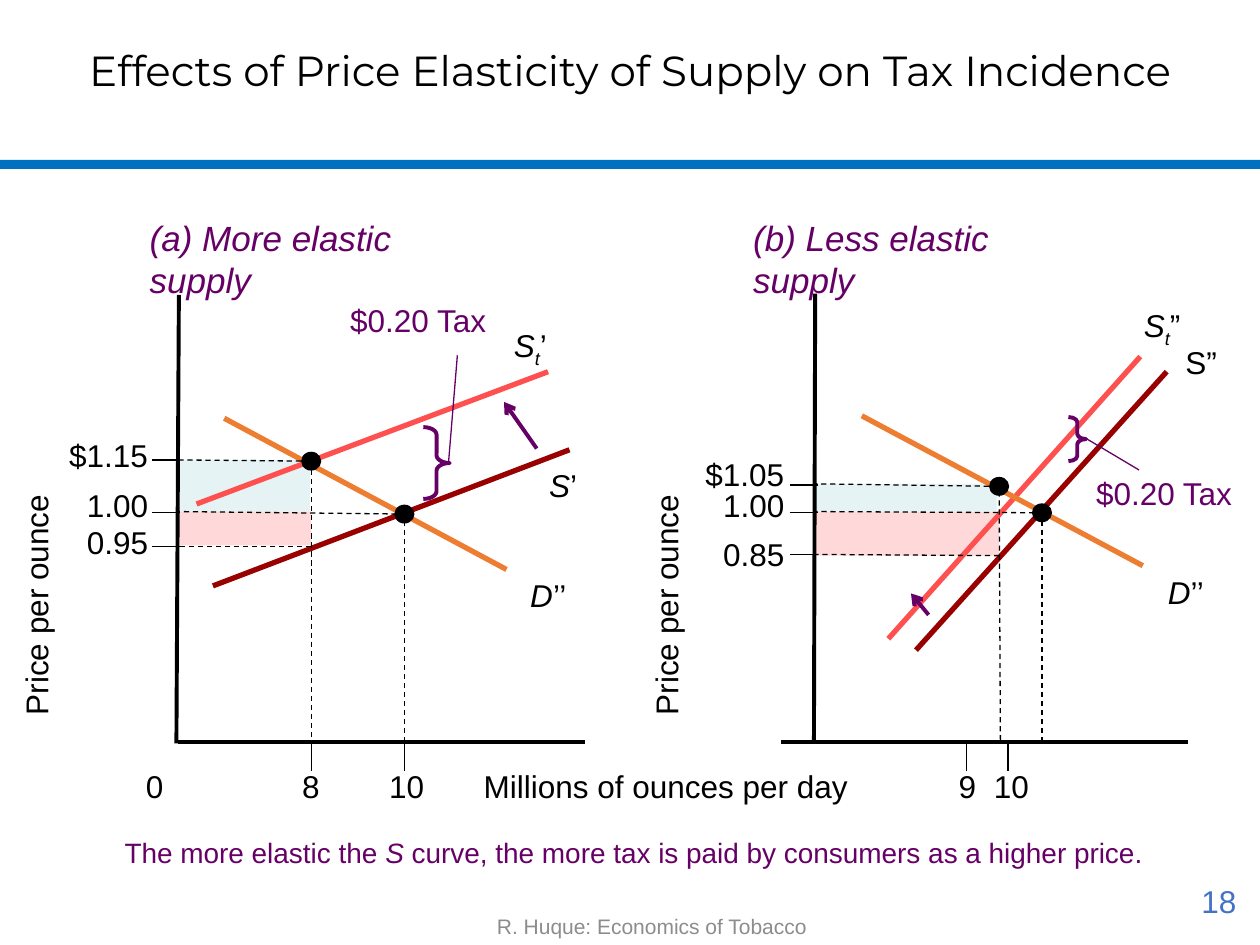
from dataclasses import dataclass

from lxml import etree
from pptx import Presentation
from pptx.dml.color import RGBColor
from pptx.enum.dml import MSO_LINE
from pptx.enum.shapes import MSO_CONNECTOR, MSO_SHAPE
from pptx.enum.text import MSO_ANCHOR, PP_ALIGN
from pptx.oxml.ns import qn
from pptx.util import Inches, Pt

RECT, OVAL, BRACE = MSO_SHAPE.RECTANGLE, MSO_SHAPE.OVAL, MSO_SHAPE.RIGHT_BRACE
STRAIGHT, DASH = MSO_CONNECTOR.STRAIGHT, MSO_LINE.DASH
TOP, MIDDLE, BOTTOM = MSO_ANCHOR.TOP, MSO_ANCHOR.MIDDLE, MSO_ANCHOR.BOTTOM
LEFT, CENTER, RIGHT = PP_ALIGN.LEFT, PP_ALIGN.CENTER, PP_ALIGN.RIGHT

BLACK, PURPLE, BLUE = "000000", "660066", "0070C0"
PINK, PALE_BLUE = "FFD9D9", "E6F3F4"
TAXED, SUPPLY, DEMAND = "FF5050", "990000", "ED7D31"
AXIS_Y = 5.89

Box = tuple[float, float, float, float]
Point = tuple[float, float]
Segment = tuple[float, float, float, float]


@dataclass
class Label:
    runs: list[tuple[str, str]]  # text and style: "", "i" or "sub"
    box: Box
    color: str = BLACK
    size: int = 18
    wrap: bool = False
    align: PP_ALIGN = LEFT
    anchor: MSO_ANCHOR = TOP
    rotation: int = 0


@dataclass
class Curve:
    color: str
    line: Segment
    label: Label


@dataclass
class Panel:
    heading: Label
    areas: list[tuple[str, Box]]
    curves: list[Curve]
    guides: list[Segment]
    dots: list[Point]
    brace: Box
    leader: Segment
    tax_at: Point
    shift: Segment
    axes: list[Segment]
    price_ticks: list[float]
    prices: list[tuple[str, float, float]]
    quantity_ticks: list[float]
    quantities: list[tuple[str, float]]
    tick_x: float
    axis_title_x: float


def rgb(color: str) -> RGBColor:
    return RGBColor.from_string(color)


def draw_label(s, label: Label) -> None:
    tb = s.shapes.add_textbox(*map(Inches, label.box))
    tb.rotation = label.rotation
    tf = tb.text_frame
    tf.word_wrap = label.wrap
    tf.vertical_anchor = label.anchor
    p = tf.paragraphs[0]
    p.alignment = label.align
    p.font.name, p.font.size = "Arial", Pt(label.size)
    p.font.color.rgb = rgb(label.color)
    for text, style in label.runs:
        r = p.add_run()
        r.text = text
        # Run properties are explicit so that mixed styles keep one look
        r.font.name, r.font.size = "Arial", Pt(label.size)
        r.font.color.rgb = rgb(label.color)
        r.font.italic = style in ("i", "sub")
        if style == "sub":
            r.font._element.set("baseline", "-25000")


def draw_line(s, seg: Segment, color: str = BLACK, width: float = 0.75,
              dashed: bool = False, arrow: bool = False) -> None:
    c = s.shapes.add_connector(STRAIGHT, *map(Inches, seg))
    c.line.color.rgb = rgb(color)
    c.line.width = Pt(width)
    if dashed:
        c.line.dash_style = DASH
    if arrow:
        etree.SubElement(c.line._get_or_add_ln(), qn("a:tailEnd"), type="arrow")
    etree.SubElement(c._element.spPr, qn("a:effectLst"))


def draw_shape(s, kind: MSO_SHAPE, box: Box, fill: str):
    sp = s.shapes.add_shape(kind, *map(Inches, box))
    sp.shadow.inherit = False
    sp.fill.solid()
    sp.fill.fore_color.rgb = rgb(fill)
    sp.line.fill.background()
    return sp


def draw_brace(s, box: Box) -> None:
    sp = draw_shape(s, BRACE, box, PURPLE)
    sp.adjustments[0] = 0.29
    sp.fill.background()
    sp.line.color.rgb = rgb(PURPLE)
    sp.line.width = Pt(2.25)


def draw_panel(s, panel: Panel) -> None:
    # Tax burden areas, curves and guides
    for fill, box in panel.areas:
        draw_shape(s, RECT, box, fill)
    for curve in panel.curves:
        draw_line(s, curve.line, curve.color, 3)
        draw_label(s, curve.label)
    for guide in panel.guides:
        draw_line(s, guide, dashed=True)
    for x, y in panel.dots:
        draw_shape(s, OVAL, (x - 0.08, y - 0.075, 0.16, 0.15), BLACK)
    # Size of the tax and shift of supply
    draw_brace(s, panel.brace)
    draw_line(s, panel.leader, PURPLE)
    draw_label(s, Label([("$0.20 Tax", "")], (*panel.tax_at, 1.31, 0.4), PURPLE))
    draw_line(s, panel.shift, PURPLE, 2.25, arrow=True)
    # Axes, ticks and their labels
    for axis in panel.axes:
        draw_line(s, axis, width=2.25)
    for y in panel.price_ticks:
        draw_line(s, (panel.tick_x, y, panel.tick_x + 0.22, y))
    for x in panel.quantity_ticks:
        draw_line(s, (x, AXIS_Y, x, AXIS_Y + 0.23))
    for text, x, y in panel.prices:
        draw_label(s, Label([(text, "")], (x, y, 0.69 if len(text) == 4 else 0.83, 0.4)))
    for text, x in panel.quantities:
        draw_label(s, Label([(text, "")], (x, 6.04, 0.2 + 0.14 * len(text), 0.4)))
    draw_label(s, Label([("Price per ounce", "")],
                        (panel.axis_title_x, 4.6, 1.95, 0.4), rotation=270))
    draw_label(s, panel.heading)


def heading(text: str, x: float) -> Label:
    return Label([(text, "i")], (x, 1.67, 2.8, 0.75), PURPLE, 20, wrap=True)


def taxed_label(prime: str, x: float, y: float) -> Label:
    return Label([("S", "i"), ("t", "sub"), (prime, "")], (x, y, 0.63, 0.4), wrap=True)


def demand_label(x: float, y: float) -> Label:
    return Label([("D", "i"), ("’’", "")], (x, y, 0.49, 0.4))


PANELS = [
    Panel(
        heading=heading("(a) More elastic supply", 1.09),
        areas=[(PINK, (1.4, 4.06, 1.07, 0.27)), (PALE_BLUE, (1.41, 3.65, 1.05, 0.41))],
        curves=[
            Curve(TAXED, (1.56, 4, 4.35, 2.95), taxed_label("’", 3.98, 2.54)),
            Curve(SUPPLY, (1.69, 4.65, 4.52, 3.57),
                  Label([("S", "i"), ("’", "")], (4.26, 3.65, 0.42, 0.4))),
            Curve(DEMAND, (1.78, 3.32, 4.02, 4.52), demand_label(4.11, 4.52))],
        guides=[(2.46, 3.66, 1.39, 3.65), (2.47, 3.66, 2.47, 5.9), (3.22, 4.08, 1.4, 4.06),
                (3.21, 4.06, 3.21, 5.91), (2.47, 4.34, 1.39, 4.34)],
        dots=[(2.47, 3.66), (3.21, 4.08)],
        brace=(3.36, 3.39, 0.21, 0.57), leader=(3.56, 3.67, 3.63, 2.82),
        tax_at=(2.68, 2.34), shift=(4.26, 3.56, 4, 3.19),
        axes=[(1.42, 2.34, 1.4, 5.9), (1.41, AXIS_Y, 4.64, AXIS_Y)],
        price_ticks=[3.65, 4.07, 4.34], tick_x=1.21,
        prices=[("$1.15", 0.45, 3.41), ("1.00", 0.59, 3.81), ("0.95", 0.59, 4.1)],
        quantity_ticks=[2.47, 3.21],
        quantities=[("0", 1.06), ("8", 2.3), ("10", 2.99)], axis_title_x=-0.69),
    Panel(
        heading=heading("(b) Less elastic supply", 5.88),
        areas=[(PINK, (6.45, 4.06, 1.48, 0.35)), (PALE_BLUE, (6.46, 3.84, 1.45, 0.22))],
        curves=[
            Curve(TAXED, (7.05, 5.07, 9.05, 2.83), taxed_label("”", 8.98, 2.38)),
            Curve(SUPPLY, (7.27, 5.16, 9.26, 2.95),
                  Label([("S”", "")], (9.31, 2.67, 0.45, 0.4))),
            Curve(DEMAND, (6.84, 3.3, 9.07, 4.49), demand_label(9.17, 4.5))],
        guides=[(7.92, 3.86, 6.46, 3.84), (7.93, 3.9, 7.94, 5.89), (8.28, 4.07, 6.46, 4.06),
                (8.27, 4.06, 8.27, 5.91), (7.93, 4.41, 6.45, 4.4)],
        dots=[(7.93, 3.86), (8.27, 4.07)],
        brace=(8.48, 3.31, 0.14, 0.35), leader=(8.62, 3.48, 9.04, 3.73),
        tax_at=(8.6, 3.71), shift=(7.37, 4.88, 7.23, 4.71),
        axes=[(6.47, 2.33, 6.46, AXIS_Y), (6.2, AXIS_Y, 9.43, AXIS_Y)],
        price_ticks=[3.85, 4.07, 4.4], tick_x=6.27,
        prices=[("$1.05", 5.5, 3.56), ("1.00", 5.64, 3.81), ("0.85", 5.64, 4.2)],
        quantity_ticks=[7.67, 8], quantities=[("9", 7.51), ("10", 7.79)],
        axis_title_x=4.31),
]

CAPTIONS = [
    Label([("Millions of ounces per day", "")], (3.74, 6.04, 3.09, 0.4)),
    Label([("The more elastic the ", ""), ("S", "i"),
           (" curve, the more tax is paid by consumers as a higher price.", "")],
          (0.89, 6.58, 8.69, 0.37), PURPLE, 16, wrap=True),
    Label([("R. Huque: Economics of Tobacco", "")], (3.31, 7.1, 3.73, 0.4),
          "8C8C8C", 12, wrap=True, align=CENTER, anchor=BOTTOM),
    Label([("18", "")], (7.66, 6.95, 2.25, 0.4), "4472C4", wrap=True,
          align=RIGHT, anchor=MIDDLE),
]


def main() -> None:
    prs = Presentation()
    prs.slide_width, prs.slide_height = Inches(10), Inches(7.5)
    s = prs.slides.add_slide(prs.slide_layouts[5])
    # Title and rule below it
    title = s.shapes.title
    title.left, title.top, title.width, title.height = map(Inches, (0, 0.3, 10, 0.5))
    title.text_frame.text = "Effects of Price Elasticity of Supply on Tax Incidence"
    title.text_frame.vertical_anchor = TOP
    p = title.text_frame.paragraphs[0]
    p.alignment = CENTER
    p.font.name, p.font.size, p.font.color.rgb = "Montserrat", Pt(24), rgb(BLACK)
    draw_shape(s, RECT, (0, 1.27, 10, 0.07), BLUE)
    for panel in PANELS:
        draw_panel(s, panel)
    for caption in CAPTIONS:
        draw_label(s, caption)
    prs.save("out.pptx")


if __name__ == "__main__":
    main()
